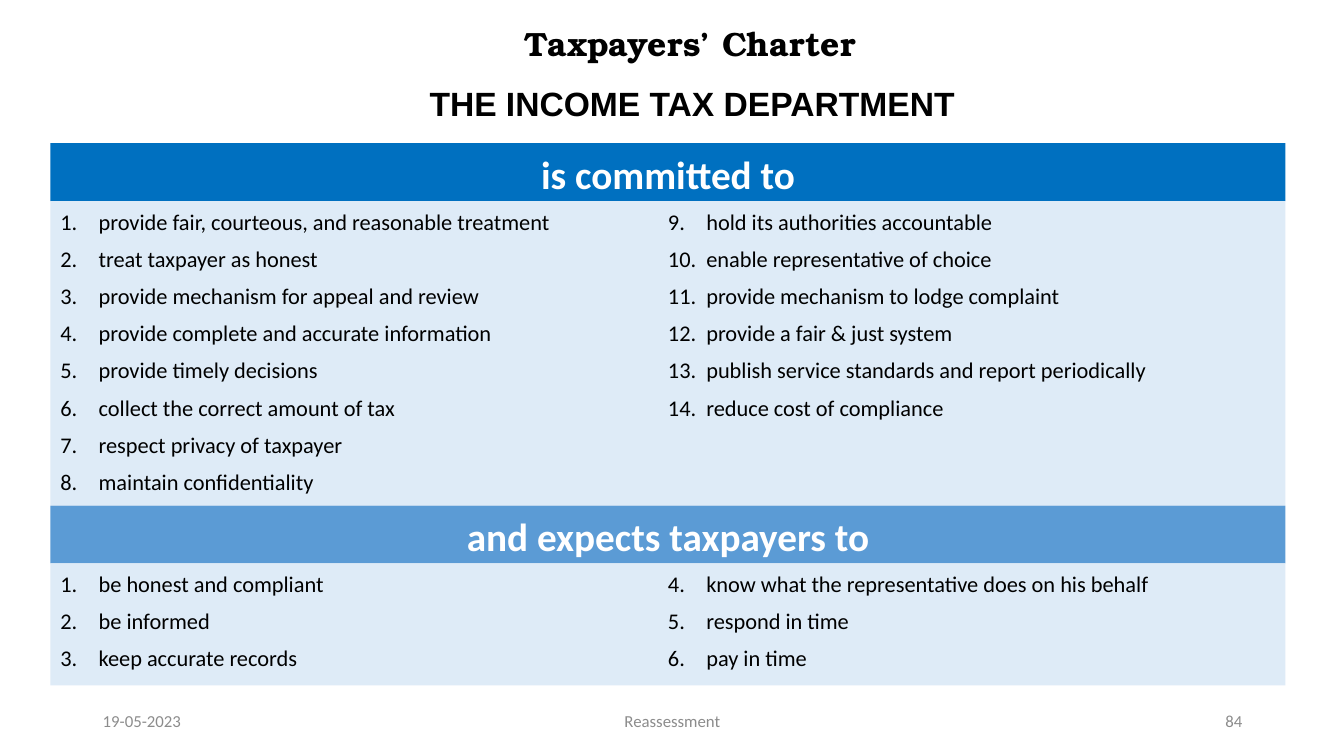
from lxml import etree
from pptx import Presentation
from pptx import util as u
from pptx.dml.color import RGBColor
from pptx.enum import shapes, text
from pptx.oxml.ns import qn

THEME = {
    "title_font": "TeX Gyre Bonum", "subtitle_font": "Arial", "body_font": "Calibri",
    "title_size": 24, "banner_size": 28, "item_size": 16, "footer_size": 12,
    "black": "000000", "white": "FFFFFF", "grey": "8C8C8C",
    "commit_blue": "0070C0", "expect_blue": "5B9BD5", "panel": "DEEBF7",
}
LEFT, CENTER, RIGHT = text.PP_ALIGN.LEFT, text.PP_ALIGN.CENTER, text.PP_ALIGN.RIGHT

deck = Presentation()
deck.slide_width, deck.slide_height = u.Inches(13.33), u.Inches(7.5)
page = deck.slides.add_slide(deck.slide_layouts[6])


def write(box, lines, font, size, colour, align=LEFT, bold=False,
          spacing=1.0, before=0, after=0, anchor=text.MSO_ANCHOR.MIDDLE):
    """Fill a shape with equally formatted paragraphs."""
    frame = box.text_frame
    frame.text = "\n".join(lines)
    frame.word_wrap = True
    frame.vertical_anchor = anchor
    for para in frame.paragraphs:
        para.alignment = align
        para.line_spacing = spacing
        para.space_before, para.space_after = u.Pt(before), u.Pt(after)
        for span in para.runs:
            span.font.name, span.font.size = font, u.Pt(size)
            span.font.bold = bold
            span.font.color.rgb = RGBColor.from_string(colour)


def add_band(top, height, colour):
    """Add a borderless rectangle across the content width."""
    band = page.shapes.add_shape(
        shapes.MSO_SHAPE.RECTANGLE, u.Inches(0.5), u.Inches(top),
        u.Inches(12.25), u.Inches(height))
    band.shadow.inherit = False
    band.fill.solid()
    band.fill.fore_color.rgb = RGBColor.from_string(colour)
    band.line.fill.background()
    return band


# Headings
headings = [
    ("Taxpayers’ Charter", THEME["title_font"], (2.35, 0.02, 8.99, 0.87), 0.9, 0, 0),
    ("THE INCOME TAX DEPARTMENT", THEME["subtitle_font"], (4.13, 0.75, 5.47, 0.51), 1.07, 6, 8),
]
for wording, font, place, spacing, before, after in headings:
    box = page.shapes.add_textbox(*map(u.Inches, place))
    write(box, [wording], font, THEME["title_size"], THEME["black"], CENTER, True,
          spacing, before, after)
box.text_frame.vertical_anchor = text.MSO_ANCHOR.TOP

# Each section is a banner above a two-column numbered panel
sections = [
    ("is committed to", THEME["commit_blue"], 10, 0, 3.02, [
        "provide fair, courteous, and reasonable treatment",
        "treat taxpayer as honest",
        "provide mechanism for appeal and review",
        "provide complete and accurate information",
        "provide timely decisions",
        "collect the correct amount of tax",
        "respect privacy of taxpayer",
        "maintain confidentiality",
        "hold its authorities accountable",
        "enable representative of choice",
        "provide mechanism to lodge complaint",
        "provide a fair & just system",
        "publish service standards and report periodically",
        "reduce cost of compliance",
    ]),
    ("and expects taxpayers to", THEME["expect_blue"], 7.5, 8, 1.21, [
        "be honest and compliant",
        "be informed",
        "keep accurate records",
        "know what the representative does on his behalf",
        "respond in time",
        "pay in time",
    ]),
]
banner_height = 0.575
top = 1.42
for heading, colour, before, after, panel_height, items in sections:
    banner = add_band(top, banner_height, colour)
    write(banner, [heading], THEME["body_font"], THEME["banner_size"], THEME["white"],
          CENTER, True, 1.07, before, after)
    top += banner_height

    panel = add_band(top, panel_height, THEME["panel"])
    write(panel, items, THEME["body_font"], THEME["item_size"], THEME["black"],
          spacing=1.07, before=3, after=3, anchor=text.MSO_ANCHOR.TOP)
    panel.text_frame._txBody.bodyPr.set("numCol", "2")
    for para in panel.text_frame.paragraphs:
        properties = para._p.get_or_add_pPr()
        properties.set("marL", str(u.Inches(0.38)))
        properties.set("indent", str(-u.Inches(0.38)))
        etree.SubElement(properties, qn("a:buFont"), typeface="+mj-lt")
        etree.SubElement(properties, qn("a:buAutoNum"), type="arabicPeriod")
    top += panel_height

# Footer
footers = [
    ("19-05-2023", 0.92, 3, LEFT),
    ("Reassessment", 4.42, 4.5, CENTER),
    ("84", 9.42, 3, RIGHT),
]
for wording, left, width, align in footers:
    box = page.shapes.add_textbox(
        u.Inches(left), u.Inches(6.95), u.Inches(width), u.Inches(0.4))
    write(box, [wording], THEME["body_font"], THEME["footer_size"], THEME["grey"], align)

deck.save("out.pptx")
